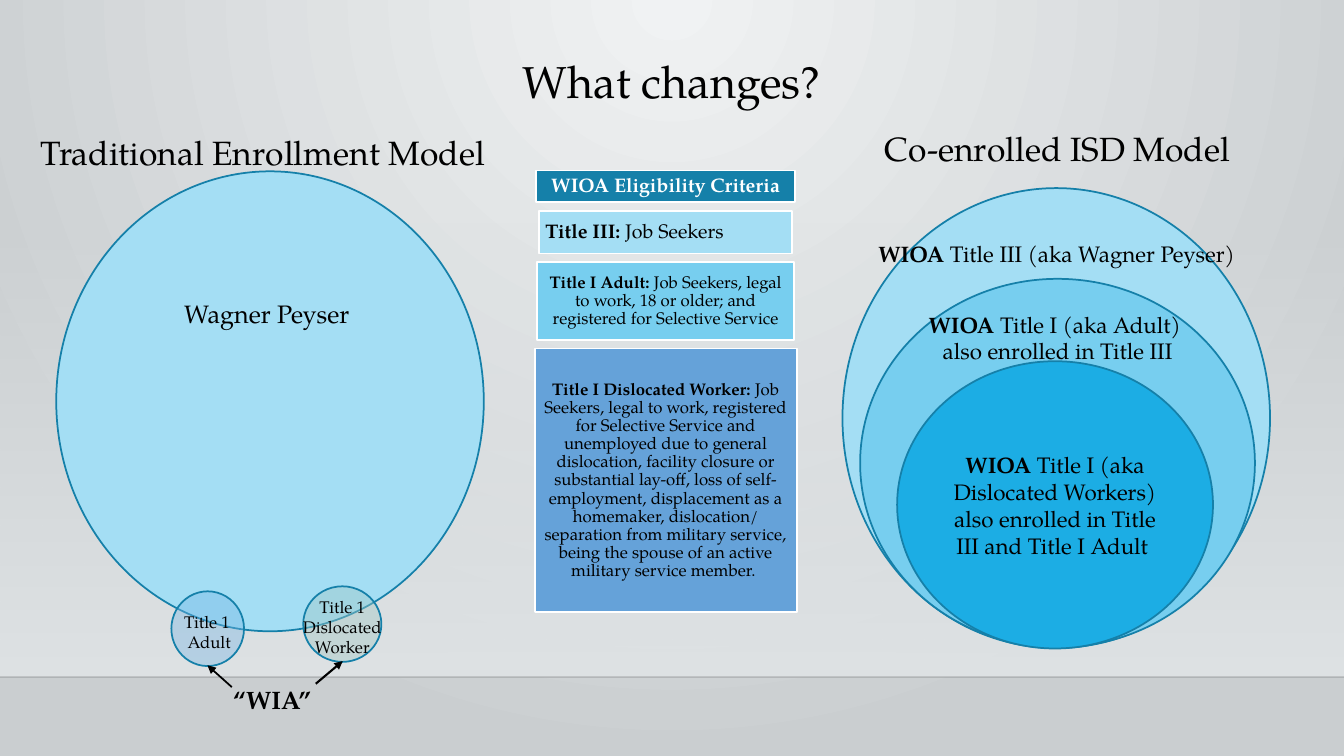
from lxml.etree import SubElement
from pptx import Presentation
from pptx.dml.color import RGBColor
from pptx.enum.shapes import MSO_CONNECTOR, MSO_SHAPE
from pptx.enum.text import MSO_ANCHOR, PP_ALIGN
from pptx.oxml.ns import qn
from pptx.util import Inches, Pt

COLORS = {
    "glow": "F0F2F3", "edge": "CACED0", "band": "DFE3E5", "rule": "000001",
    "text": "000000", "white": "FFFFFF", "outline": "1580A9",
    "pale": "A4DEF4", "sky": "77CEEF", "bright": "1CADE4", "steel": "65A2D9",
    "adult": "75B6E5", "worker": "A1C8C5",
}
FONT = "TeX Gyre Pagella"
COLUMNS, ROWS = 160, 90
CELL = Inches(1) / 12


class EnrollmentSlide:
    """Draws on a grid of 160 columns by 90 rows."""

    def __init__(self, presentation):
        presentation.slide_width = self.cells(COLUMNS)
        presentation.slide_height = self.cells(ROWS)
        self.slide = presentation.slides.add_slide(presentation.slide_layouts[6])
        self.shapes = self.slide.shapes

    def cells(self, count):
        return round(count * CELL)

    def color(self, name):
        return RGBColor.from_string(COLORS[name])

    def set_alpha(self, parent, percent):
        for color in parent.iter(qn("a:srgbClr")):
            SubElement(color, qn("a:alpha"), val=str(percent * 1000))

    def gradient(self, fill, names):
        fill.gradient()
        for stop, position, name in zip(fill.gradient_stops, (0, 1), names):
            stop.position = position
            stop.color.rgb = self.color(name)

    def background(self):
        self.gradient(self.slide.background.fill, ("glow", "edge"))
        gradient = next(self.slide.element.iter(qn("a:gradFill")))
        gradient.remove(gradient.find(qn("a:lin")))
        circle = SubElement(gradient, qn("a:path"), path="circle")
        SubElement(circle, qn("a:fillToRect"), l="43000", t="0", r="43000", b="100000")

    def band(self, top, height):
        shape = self.shape(MSO_SHAPE.RECTANGLE, (0, top, COLUMNS, height), "band", None)
        self.gradient(shape.fill, ("band", "band"))
        shape.fill.gradient_angle = 270
        first_stop = next(shape.element.iter(qn("a:gs")))
        self.set_alpha(first_stop, 0)

    def shape(self, kind, area, fill, line="outline", alpha=None):
        shape = self.shapes.add_shape(kind, *map(self.cells, area))
        shape.shadow.inherit = False
        shape.fill.solid()
        shape.fill.fore_color.rgb = self.color(fill)
        if alpha is not None:
            self.set_alpha(shape.element.spPr, alpha)
        if line:
            shape.line.color.rgb = self.color(line)
            shape.line.width = Pt(1.25)
        else:
            shape.line.fill.background()
        return shape

    def add_text(self, shape, text, size, lead="", bold=False, color="text",
                 align=PP_ALIGN.CENTER, anchor=MSO_ANCHOR.MIDDLE, spacing=None):
        """Fills a shape with text; lead is a bold opening of the first paragraph."""
        frame = shape.text_frame
        frame.word_wrap = True
        frame.vertical_anchor = anchor
        frame.text = text
        if lead:
            first = frame.paragraphs[0]
            opening = first.text
            first.text = lead
            first.add_run().text = opening
        for paragraph in frame.paragraphs:
            paragraph.alignment = align
            if spacing:
                paragraph.line_spacing = spacing
            for run in paragraph.runs:
                run.font.name = FONT
                run.font.size = Pt(size)
                run.font.bold = bold
                run.font.color.rgb = self.color(color)
        if lead:
            first.runs[0].font.bold = True
        return frame

    def label(self, area, text, size, anchor=MSO_ANCHOR.TOP, **style):
        box = self.shapes.add_textbox(*map(self.cells, area))
        self.add_text(box, text, size, anchor=anchor, **style)

    def circle(self, area, fill, alpha=None):
        return self.shape(MSO_SHAPE.OVAL, area, fill, alpha=alpha)

    def card(self, area, fill, text, size, **style):
        shape = self.shape(MSO_SHAPE.RECTANGLE, area, fill, "white")
        frame = self.add_text(shape, text, size, spacing=0.9, **style)
        frame.margin_left = frame.margin_right = Inches(0.06)
        frame.margin_top = frame.margin_bottom = Inches(0.06)

    def line(self, start, end, width, color="text", alpha=None, arrow=False):
        connector = self.shapes.add_connector(
            MSO_CONNECTOR.STRAIGHT, *map(self.cells, start + end))
        connector.line.color.rgb = self.color(color)
        connector.line.width = Pt(width)
        properties = connector.element.spPr
        if alpha is not None:
            self.set_alpha(properties, alpha)
        if arrow:
            SubElement(properties.find(qn("a:ln")), qn("a:tailEnd"), type="triangle")
        SubElement(properties, qn("a:effectLst"))


def main():
    presentation = Presentation()
    page = EnrollmentSlide(presentation)

    # Backdrop
    page.background()
    page.band(26.4, 54.2)
    page.line((0, 80.6), (COLUMNS, 80.6), 1, "rule", alpha=20)

    # Co-enrolled model: nested circles
    page.circle((100.3, 22.4, 50.9, 54.75), "pale")
    page.circle((102.4, 33.2, 47, 43.85), "sky")
    page.label((102.4, 36.4, 47, 7.7),
               "Title I (aka Adult) \nalso enrolled in Title III", 16, lead="WIOA ")
    page.label((103.2, 28, 45.2, 4.8),
               "Title III (aka Wagner Peyser)", 16, lead="WIOA ")
    workers = page.circle((106.8, 43, 37.6, 34.2), "bright")
    page.add_text(workers, "Title I (aka Dislocated Workers) \n"
                  "also enrolled in Title III and Title I Adult ", 16, lead="WIOA ")
    page.label((102.4, 15.2, 47, 6.6), "Co-enrolled ISD Model", 24, spacing=0.9)

    # Traditional model: one large circle and two small ones
    seekers = page.circle((6.7, 20.4, 50.9, 54.75), "pale")
    page.add_text(seekers, "Wagner Peyser ", 18).margin_bottom = page.cells(21.5)
    page.circle((36.1, 69.8, 9.3, 9), "worker", alpha=42)
    page.circle((20.4, 70.4, 8.65, 8.9), "adult", alpha=39)
    page.label((34.7, 70.4, 12.1, 8.5), "Title 1 Dislocated Worker", 12)
    page.label((19.1, 72.2, 11.6, 6), "Title 1 \nAdult", 12)
    page.label((13.6, 80.9, 37.6, 4.8), "“WIA”", 18, bold=True)
    page.line((37.6, 81.4), (40.8, 78.7), 1.5, arrow=True)
    page.line((27.6, 81.8), (24.7, 79.2), 1.25, arrow=True)
    page.label((0.8, 15.1, 61, 6), "Traditional Enrollment Model", 24)

    # Eligibility criteria: a centred stack of cards
    cards = [
        (30.8, 3.8, "outline", "WIOA Eligibility Criteria", 14,
         {"bold": True, "color": "white"}),
        (30.1, 5.1, "pale", "Job Seekers", 14,
         {"lead": "Title III: ", "align": PP_ALIGN.LEFT}),
        (30.6, 9.3, "sky",
         "Job Seekers, legal to work, 18 or older; and registered for "
         "Selective Service", 12, {"lead": "Title I Adult: "}),
        (31.2, 31.4, "steel",
         "Job Seekers, legal to work, registered for Selective Service and "
         "unemployed due to general dislocation, facility closure or "
         "substantial lay-off, loss of self-employment, displacement as a "
         "homemaker, dislocation/ separation from military service, being "
         "the spouse of an active military service member. ", 12,
         {"lead": "Title I Dislocated Worker: "}),
    ]
    center, top, gap = 79.25, 20.3, 1
    for width, height, fill, text, size, style in cards:
        page.card((center - width / 2, top, width, height), fill, text, size, **style)
        top += height + gap

    # Title
    page.label((0, 0, COLUMNS, 13.5), "What changes?", 32,
               anchor=MSO_ANCHOR.BOTTOM, spacing=0.9)

    presentation.save("out.pptx")


if __name__ == "__main__":
    main()
